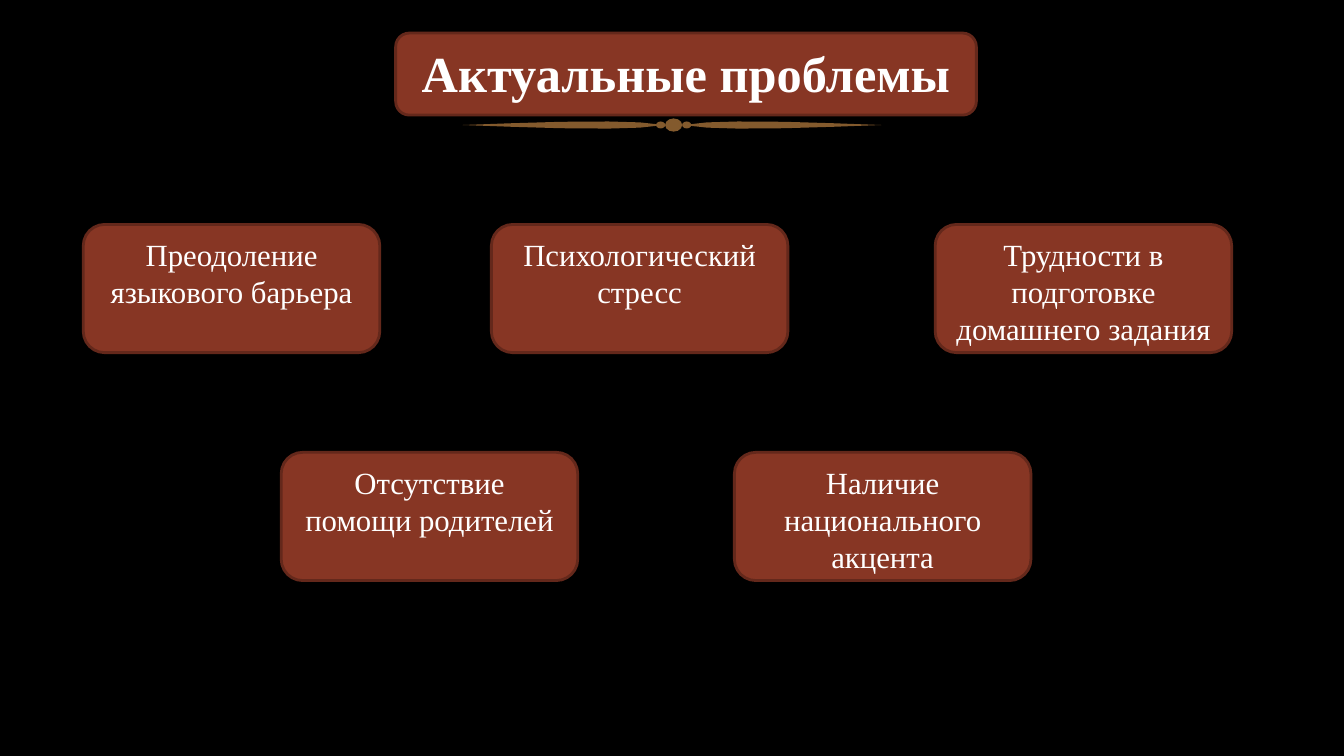
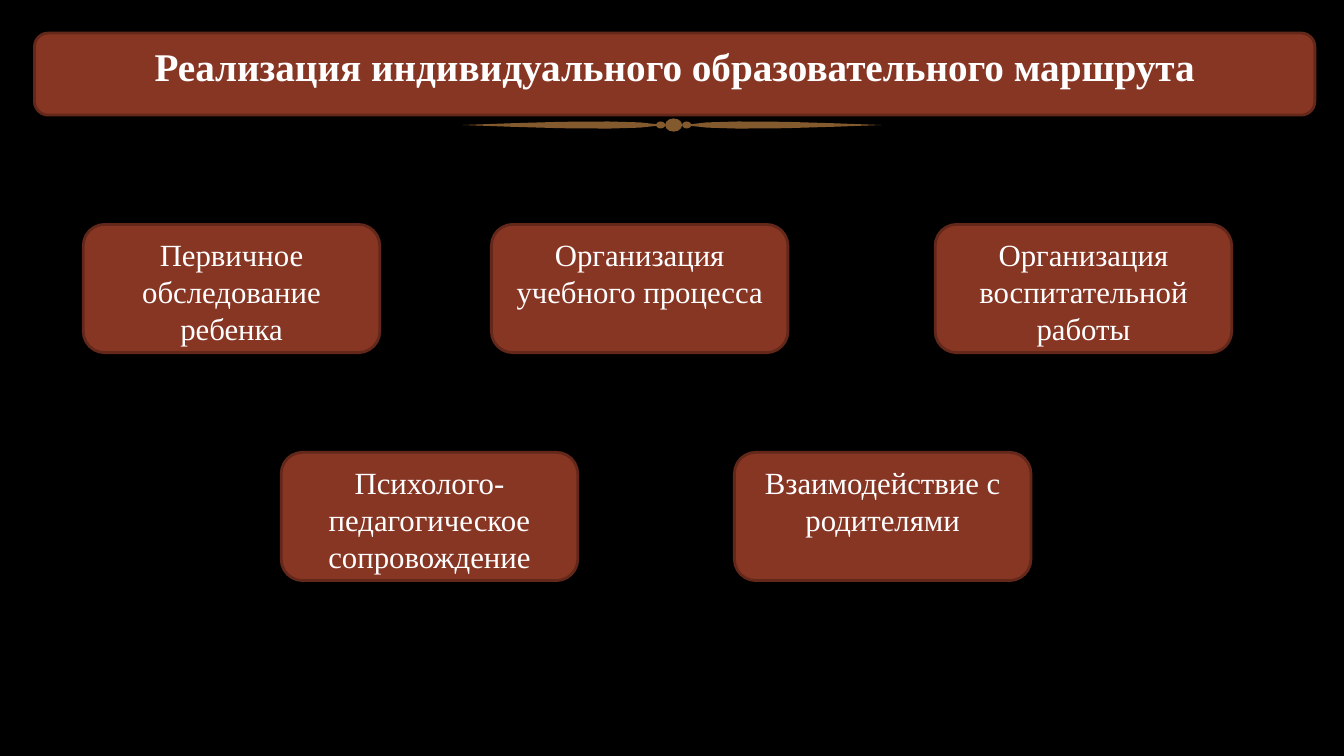
from dataclasses import dataclass

from pptx import Presentation
from pptx.dml.color import RGBColor
from pptx.enum.shapes import MSO_SHAPE
from pptx.enum.text import MSO_ANCHOR, PP_ALIGN
from pptx.util import Pt


@dataclass(frozen=True)
class Theme:
    background: RGBColor = RGBColor.from_string("000000")
    panel: RGBColor = RGBColor.from_string("873624")
    outline: RGBColor = RGBColor.from_string("64281B")
    ornament: RGBColor = RGBColor.from_string("835A2D")
    text: RGBColor = RGBColor.from_string("FFFFFF")
    font: str = "Times New Roman"
    card_size: int = 22
    outline_width: int = 2
    side_margin: int = 8


THEME = Theme()
SLIDE_WIDTH, SLIDE_HEIGHT = 960, 540
TITLE_TOP, TITLE_HEIGHT = 23.6, 58.6
CARD_WIDTH, CARD_HEIGHT = 211.8, 91.6
CARD_ROWS = [(160.3, (59.5, 351, 668)), (323.1, (200.9, 524.6))]
CARD_PLACES = [(left, top) for top, lefts in CARD_ROWS for left in lefts]
ORNAMENT_BOX = (330.5, 84.6, 299, 9.4)

# Upper edge of a blade: x as a share of its length, y as a share of half its thickness
BLADE_EDGE = [(0.25, 0.5), (0.5, 0.9), (0.74, 1), (0.9, 0.74), (0.98, 0.26)]

SLIDES = [
    (
        "Актуальные проблемы", 36, 282.6, 414.8,
        [
            "Преодоление языкового барьера",
            "Психологический стресс",
            "Трудности в подготовке домашнего задания",
            "Отсутствие помощи родителей",
            "Наличие национального акцента",
        ],
    ),
    (
        "Реализация индивидуального образовательного маршрута", 28, 24.6, 914.6,
        [
            "Первичное обследование ребенка",
            "Организация учебного процесса",
            "Организация воспитательной работы",
            "Психолого-педагогическое сопровождение",
            "Взаимодействие с родителями",
        ],
    ),
]


def paint_ornament(shape):
    shape.shadow.inherit = False
    shape.fill.solid()
    shape.fill.fore_color.rgb = THEME.ornament
    shape.line.fill.background()


def add_blade(slide, tip, root, middle, half_thickness):
    """Draw a tapering blade from its tip to its root; either may be on the left."""
    lower_edge = [(x, -y) for x, y in reversed(BLADE_EDGE)]
    outline = [(0, 0), *BLADE_EDGE, (1, 0), *lower_edge]
    points = [
        (Pt(tip + x * (root - tip)), Pt(middle - y * half_thickness))
        for x, y in outline
    ]
    builder = slide.shapes.build_freeform(*points[0])
    builder.add_line_segments(points[1:], close=True)
    paint_ornament(builder.convert_to_shape())


def add_bead(slide, center, middle, width, height):
    bead = slide.shapes.add_shape(
        MSO_SHAPE.OVAL,
        Pt(center - width / 2), Pt(middle - height / 2), Pt(width), Pt(height),
    )
    paint_ornament(bead)


def add_ornament(slide, left, top, width, height):
    middle = top + height / 2
    center = left + width / 2 + 1.2
    for tip, side in ((left, -1), (left + width, 1)):
        add_blade(slide, tip, center + side * 10, middle, height * 0.27)
        add_bead(slide, center + side * 9.3, middle, 6.5, 5)
    add_bead(slide, center, middle, 12.2, height)


def add_panel(slide, text, size, left, top, width, height, bold=False):
    panel = slide.shapes.add_shape(
        MSO_SHAPE.FLOWCHART_ALTERNATE_PROCESS,
        Pt(left), Pt(top), Pt(width), Pt(height),
    )
    panel.shadow.inherit = False
    panel.fill.solid()
    panel.fill.fore_color.rgb = THEME.panel
    panel.line.color.rgb = THEME.outline
    panel.line.width = Pt(THEME.outline_width)
    frame = panel.text_frame
    frame.word_wrap = True
    frame.vertical_anchor = MSO_ANCHOR.TOP
    frame.margin_left = frame.margin_right = Pt(THEME.side_margin)
    paragraph = frame.paragraphs[0]
    paragraph.alignment = PP_ALIGN.CENTER
    run = paragraph.add_run()
    run.text = text
    run.font.name = THEME.font
    run.font.size = Pt(size)
    run.font.bold = bold
    run.font.color.rgb = THEME.text


def add_topic_slide(presentation, title, title_size, title_left, title_width, cards):
    slide = presentation.slides.add_slide(presentation.slide_layouts[6])
    slide.background.fill.solid()
    slide.background.fill.fore_color.rgb = THEME.background
    add_ornament(slide, *ORNAMENT_BOX)
    add_panel(
        slide, title, title_size,
        title_left, TITLE_TOP, title_width, TITLE_HEIGHT, bold=True,
    )
    for text, (left, top) in zip(cards, CARD_PLACES):
        add_panel(slide, text, THEME.card_size, left, top, CARD_WIDTH, CARD_HEIGHT)


def main():
    presentation = Presentation()
    presentation.slide_width = Pt(SLIDE_WIDTH)
    presentation.slide_height = Pt(SLIDE_HEIGHT)
    for content in SLIDES:
        add_topic_slide(presentation, *content)
    presentation.save("out.pptx")


if __name__ == "__main__":
    main()
